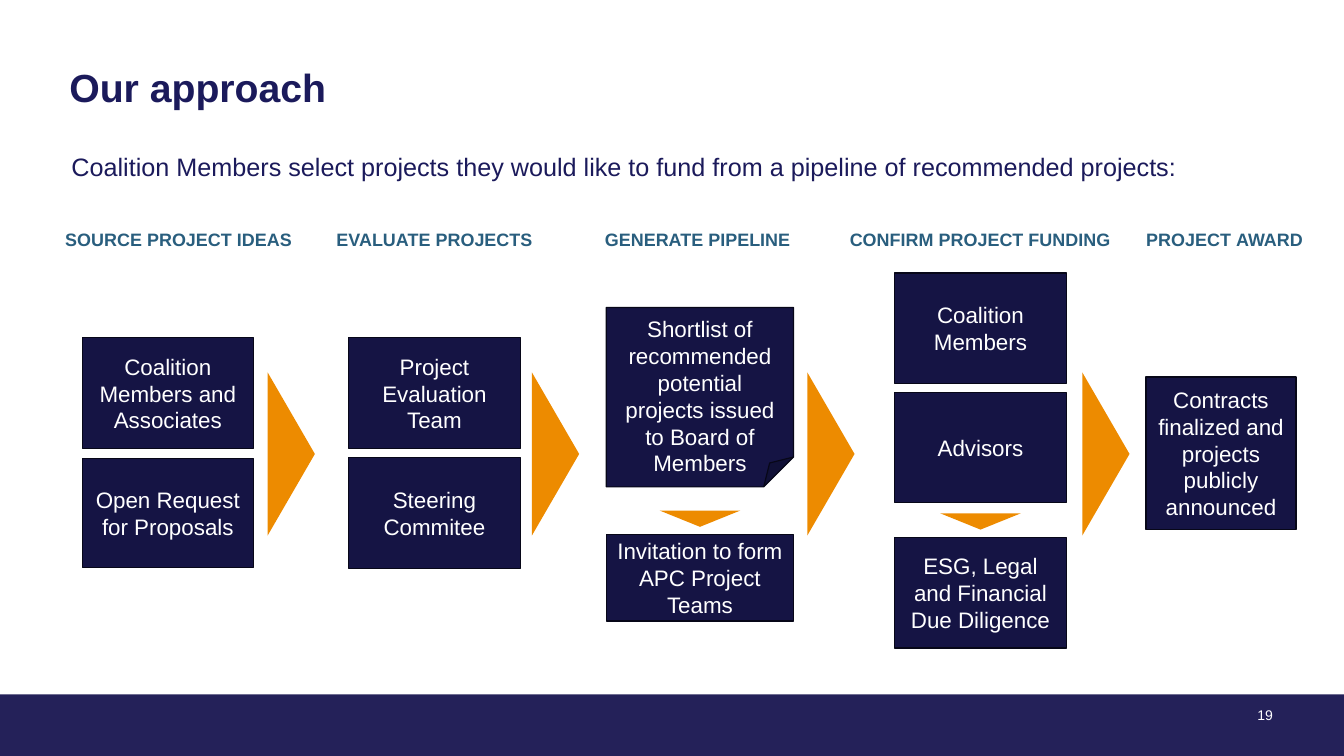
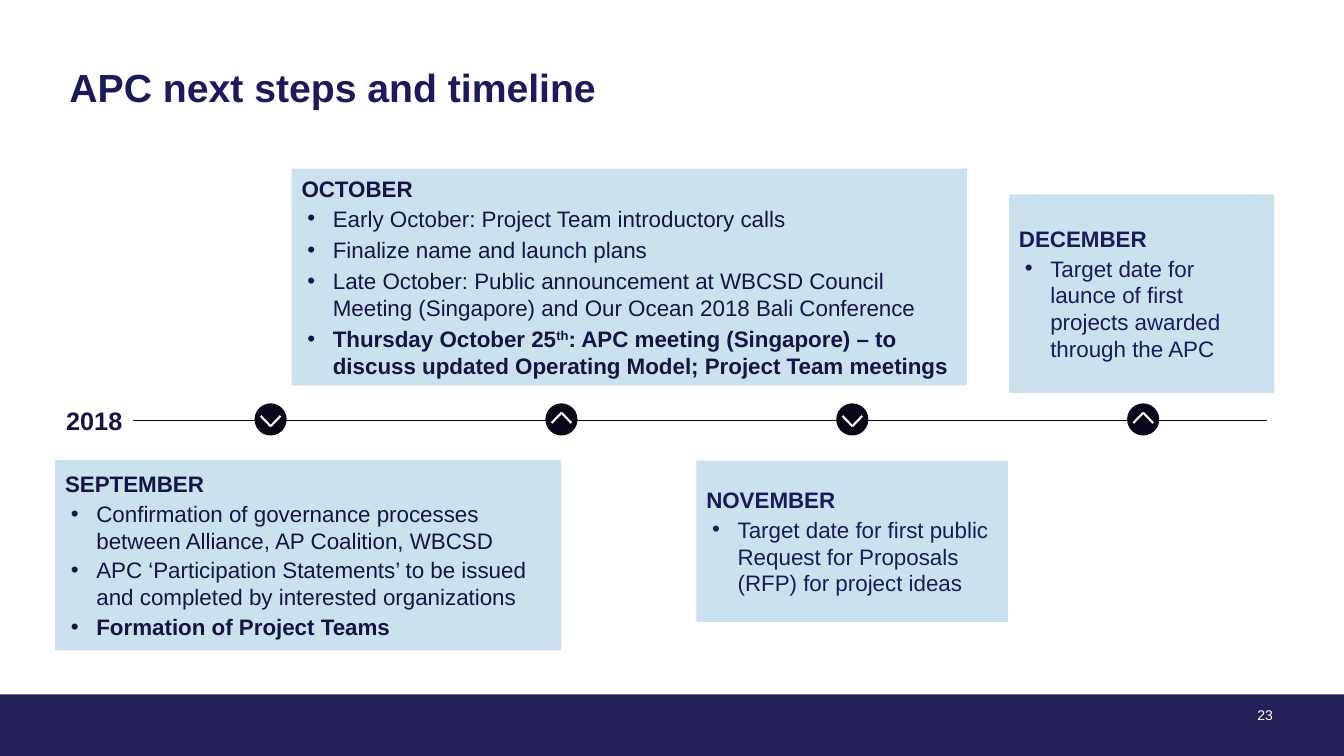
from lxml import etree
from pptx import Presentation
from pptx.dml.color import RGBColor
from pptx.enum.shapes import MSO_CONNECTOR as Link, MSO_SHAPE as Kind
from pptx.enum.text import MSO_ANCHOR as Anchor, PP_ALIGN as Align
from pptx.oxml.ns import qn
from pptx.util import Cm, Pt

# Shared look
FONT = "Arial"
NAVY, DARK, BAND = "1B1A5B", "151444", "242159"
EDGE, DISC, AXIS = "070718", "070719", "0A0921"
TEAL, GOLD, PALE, WHITE = "295E7E", "ED8B00", "CBE1EE", "FFFFFF"

# Slide 1: heading, its centre and width, box left and width,
# boxes (top, height, text), wedge above the last box
LEAD = ("Coalition Members select projects they would like to fund "
        "from a pipeline of recommended projects:")
STEPS = [
    ("source project ideas", 4.5, 6.6, 2.07, 4.32, [
        (8.51, 2.79, "Coalition Members and Associates"),
        (11.56, 2.74, "Open Request for Proposals")], False),
    ("evaluate projects", 10.95, 5.8, 8.79, 4.32, [
        (8.51, 2.79, "Project Evaluation Team"),
        (11.53, 2.79, "Steering Commitee")], False),
    ("generate pipeline", 17.58, 5.6, 15.28, 4.72, [
        (7.75, 4.52, "Shortlist of recommended potential projects "
                     "issued to Board of Members"),
        (13.47, 2.18, "Invitation to form APC Project Teams")], True),
    ("confirm project funding", 24.7, 7.6, 22.55, 4.32, [
        (6.88, 2.79, "Coalition Members"),
        (9.9, 2.77, "Advisors"),
        (13.54, 2.79, "ESG, Legal and Financial Due Diligence")], True),
    ("project award", 30.86, 4.8, 28.88, 3.78, [
        (9.5, 3.84, "Contracts finalized and projects publicly announced")],
     False),
]
FOLDED = (2, 0)  # step and box drawn as a sheet of paper
ARROWS = [7.34, 14.0, 20.94, 27.87]

# Slide 2: month, box, colour, gap after items, items (bold, text, raised, text)
MONTHS = [
    ("NOVEMBER", (17.55, 11.61, 7.85, 4.06), NAVY, 2, [
        (False, "Target date for first public Request for Proposals (RFP) "
                "for project ideas")]),
    ("DECEMBER", (25.43, 4.9, 6.68, 5), NAVY, 2, [
        (False, "Target date for launce of first projects awarded "
                "through the APC")]),
    ("SEPTEMBER", (1.39, 11.59, 12.75, 4.8), DARK, 2, [
        (False, "Confirmation of governance processes between Alliance, "
                "AP Coalition, WBCSD"),
        (False, "APC ‘Participation Statements’ to be issued and completed "
                "by interested organizations"),
        (True, "Formation of Project Teams")]),
    ("OCTOBER", (7.35, 4.25, 17.02, 5.46), DARK, 3, [
        (False, "Early October: Project Team introductory calls"),
        (False, "Finalize name and launch plans"),
        (False, "Late October: Public announcement at WBCSD Council Meeting "
                "(Singapore) and Our Ocean 2018 Bali Conference"),
        (True, "Thursday October 25", "th", ": APC meeting (Singapore) – to "
               "discuss updated Operating Model; Project Team meetings")]),
]
MARKS = [(6.82 + 7.33 * i, (1, -1)[i % 2]) for i in range(4)]  # 1 points down


def rgb(code):
    return RGBColor.from_string(code)


def write(para, text, size, color, bold=False, **extra):
    run = para.add_run()
    run.text = text
    font = run.font
    font.name, font.size, font.bold = FONT, Pt(size), bold
    font.color.rgb = rgb(color)
    for key, val in extra.items():
        run._r.get_or_add_rPr().set(key, val)


def shape(shapes, kind, x, y, w, h, fill, edge=None):
    item = shapes.add_shape(kind, Cm(x), Cm(y), Cm(w), Cm(h))
    item.shadow.inherit = False
    item.fill.solid()
    item.fill.fore_color.rgb = rgb(fill)
    if edge:
        item.line.color.rgb = rgb(edge)
        item.line.width = Pt(0.85)
    else:
        item.line.fill.background()
    frame = item.text_frame
    frame.word_wrap, frame.vertical_anchor = True, Anchor.MIDDLE
    return item


def wedge(shapes, mid, level, w, h, turn):
    item = shape(shapes, Kind.ISOSCELES_TRIANGLE,
                 mid - w / 2, level - h / 2, w, h, GOLD)
    item.rotation = turn


def line(shapes, x1, y1, x2, y2, color, width):
    item = shapes.add_connector(Link.STRAIGHT, Cm(x1), Cm(y1), Cm(x2), Cm(y2))
    item.line.color.rgb = rgb(color)
    item.line.width = Pt(width)
    etree.SubElement(item._element.spPr, qn("a:effectLst"))
    return item


def label(shapes, x, y, w, h, text, size, color, bold=False,
          align=Align.LEFT, wrap=False, **extra):
    box = shapes.add_textbox(Cm(x), Cm(y), Cm(w), Cm(h))
    box.text_frame.word_wrap = wrap
    para = box.text_frame.paragraphs[0]
    para.alignment = align
    write(para, text, size, color, bold, **extra)
    return box


def bare(frame):
    frame.margin_left = frame.margin_right = 0
    frame.margin_top = frame.margin_bottom = 0


def bullet(para):
    props = para._p.get_or_add_pPr()
    props.set("marL", str(Cm(0.79)))
    props.set("indent", str(Cm(-0.64)))
    etree.SubElement(props, qn("a:buFont")).set("typeface", FONT)
    etree.SubElement(props, qn("a:buChar")).set("char", "•")


def start(deck, title, page):
    slide = deck.slides.add_slide(deck.slide_layouts[5])
    head = slide.shapes.title
    head.left, head.top, head.width, head.height = map(
        Cm, (1.75, 1.73, 30.38, 1.07))
    frame = head.text_frame
    bare(frame)
    frame.word_wrap, frame.vertical_anchor = True, Anchor.TOP
    para = frame.paragraphs[0]
    para.alignment, para.line_spacing = Align.LEFT, 0.9
    write(para, title, 28, NAVY, True)
    shape(slide.shapes, Kind.RECTANGLE, 0, 17.5, 33.87, 1.55, BAND)
    num = label(slide.shapes, 31.01, 17.79, 1.07, 0.43, page, 10, WHITE,
                align=Align.RIGHT, wrap=True)
    bare(num.text_frame)
    num.text_frame.vertical_anchor = Anchor.BOTTOM
    return slide.shapes


def approach(deck):
    shapes = start(deck, "Our approach", "19")
    label(shapes, 1.55, 3.69, 30.58, 1.02, LEAD, 18, NAVY, wrap=True)
    for col, (name, mid, wide, x, w, boxes, drop) in enumerate(STEPS):
        label(shapes, mid - wide / 2, 5.52, wide, 0.94, name, 16, TEAL, True,
              Align.CENTER, cap="small")
        for row, (y, h, text) in enumerate(boxes):
            fold = (col, row) == FOLDED
            kind = Kind.FOLDED_CORNER if fold else Kind.RECTANGLE
            box = shape(shapes, kind, x, y, w, h, DARK, EDGE)
            if fold:
                box.text_frame.margin_top = Cm(0.81)
            para = box.text_frame.paragraphs[0]
            para.alignment = Align.CENTER
            write(para, text, 16, WHITE)
        if drop:
            wedge(shapes, x + w / 2, boxes[-1][0] - 0.4, 2.03, 0.41, 180)
    for mid in ARROWS:
        wedge(shapes, mid, 11.44, 4.11, 1.19, 90)


def timeline(deck):
    shapes = start(deck, "APC next steps and timeline", "23")
    # Axis with its year
    year = label(shapes, 1.42, 10.08, 1.93, 1.02, "2018", 18, DARK, True)
    axis = line(shapes, 3.35, 10.59, 31.93, 10.59, AXIS, 0.75)
    axis.begin_connect(year, 3)
    # Discs with chevrons
    for mid, way in MARKS:
        group = shapes.add_group_shape().shapes
        shape(group, Kind.OVAL, mid - 0.39, 10.18, 0.78, 0.78, DISC, DISC)
        for side in (0.25, -0.25):
            line(group, mid + side, 10.57 - 0.09 * way,
                 mid, 10.57 + 0.17 * way, WHITE, 1.5)
    # Month boxes
    for name, place, color, gap, items in MONTHS:
        frame = shape(shapes, Kind.RECTANGLE, *place, PALE).text_frame
        para = frame.paragraphs[0]
        para.alignment, para.space_after = Align.LEFT, Pt(2)
        write(para, name, 16, color, True)
        for bold, *parts in items:
            para = frame.add_paragraph()
            bullet(para)
            para.alignment, para.space_after = Align.LEFT, Pt(gap)
            for i, text in enumerate(parts):
                extra = {"baseline": "30000"} if i % 2 else {}
                write(para, text, 16, color, bold, **extra)


def main():
    deck = Presentation()
    deck.slide_width, deck.slide_height = Cm(33.87), Cm(19.05)
    approach(deck)
    timeline(deck)
    deck.save("out.pptx")


if __name__ == "__main__":
    main()
